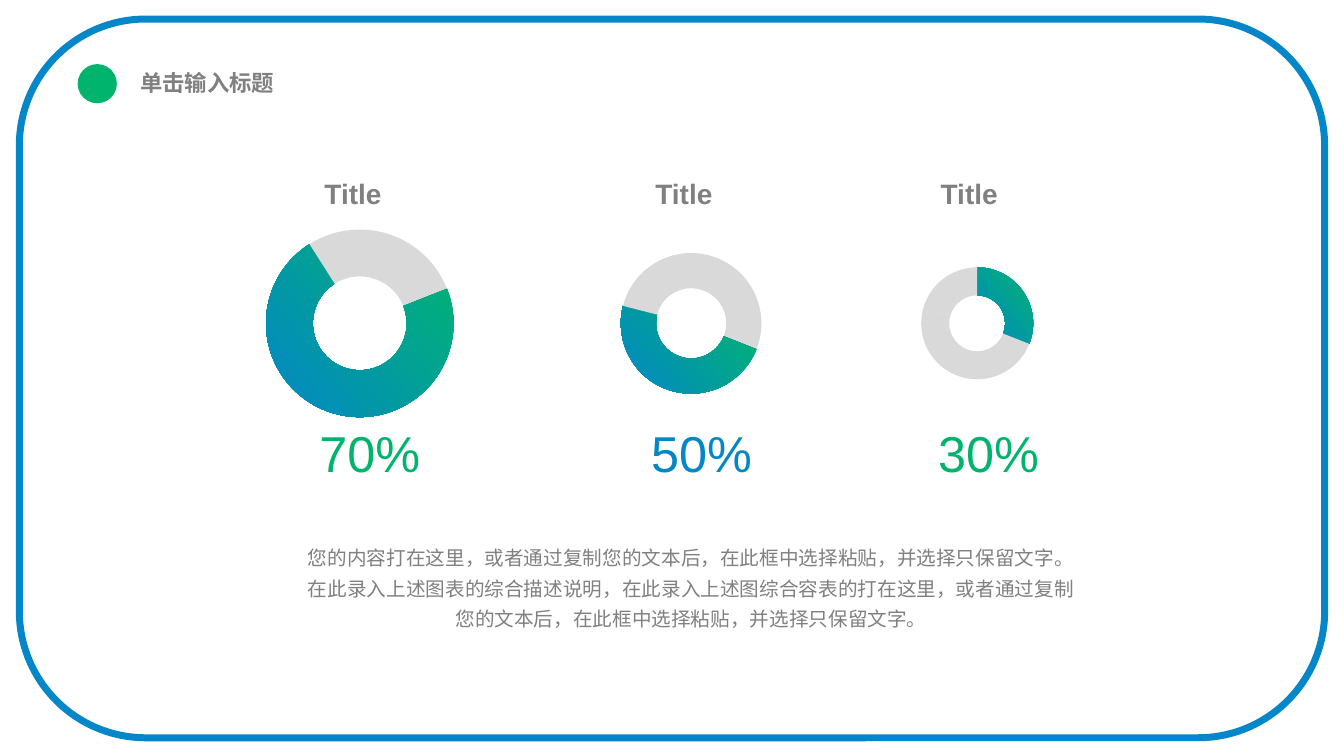
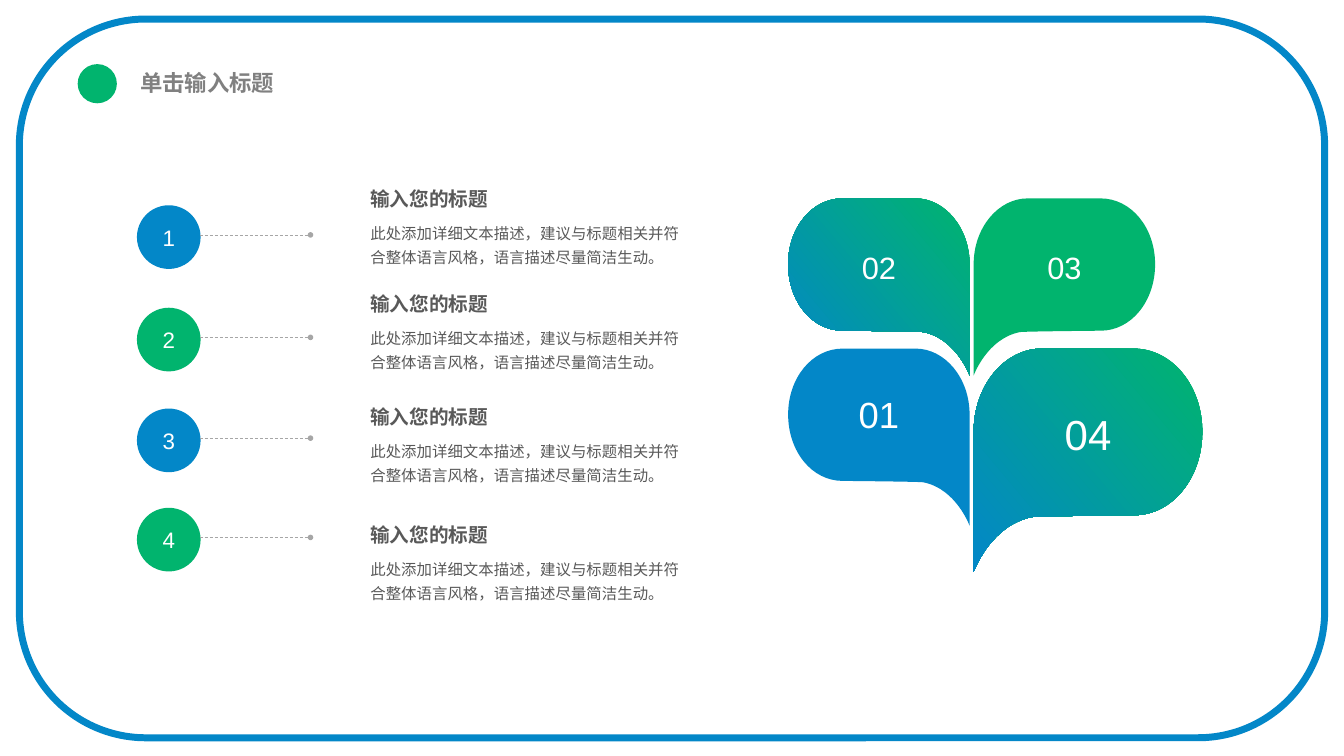
import lxml.etree
import pptx
import pptx.chart.data
import pptx.dml.color
import pptx.enum.chart
import pptx.enum.dml
import pptx.enum.shapes
import pptx.enum.text
import pptx.oxml.ns
import pptx.util

Pt = pptx.util.Pt
RGB = pptx.dml.color.RGBColor
SHAPE = pptx.enum.shapes.MSO_SHAPE
ALIGN = pptx.enum.text.PP_ALIGN
ANCHOR = pptx.enum.text.MSO_ANCHOR
qn = pptx.oxml.ns.qn

BLUE = RGB(0x03, 0x87, 0xC8)
GREEN = RGB(0x01, 0xB4, 0x6E)
BLEND = (GREEN, BLUE)
WHITE = RGB(0xFF, 0xFF, 0xFF)
BLACK = RGB(0, 0, 0)
PALE = RGB(0xD9, 0xD9, 0xD9)
RULE = RGB(0xA6, 0xA6, 0xA6)
GREY = RGB(0x80, 0x80, 0x80)
DARK = RGB(0x59, 0x59, 0x59)
FONT = "Arial"

TITLE = "单击输入标题"
HEAD = "输入您的标题"
BODY = "此处添加详细文本描述，建议与标题相关并符合整体语言风格，语言描述尽量简洁生动。"
NOTE = (
    "您的内容打在这里，或者通过复制您的文本后，在此框中选择粘贴，并选择只保留文字。"
    "在此录入上述图表的综合描述说明，在此录入上述图综合容表的打在这里，"
    "或者通过复制您的文本后，在此框中选择粘贴，并选择只保留文字。"
)

LEAF_W = 129.6
LEAF_START = (39, 0)
LEAF = [
    ((91, 0), (91, 0), (91, 0)),
    ((112, 0), (LEAF_W, 21), (LEAF_W, 47)),
    ((LEAF_W, 73), (LEAF_W, 126.5), (LEAF_W, 126.5)),
    ((LEAF_W, 126.5), (120, 100), (96.5, 95.5)),
    ((93.5, 95), (39, 94.5), (39, 94.5)),
    ((17, 94.5), (0, 73.5), (0, 47)),
    ((0, 21), (17, 0), (39, 0)),
]


def paint(fill, color):
    if color == BLEND:
        fill.gradient()
        fill.gradient_angle = 220
        for stop, shade in zip(fill.gradient_stops, BLEND):
            stop.color.rgb = shade
        fill.gradient_stops[0].position = 0
        fill.gradient_stops[1].position = 1
    else:
        fill.solid()
        fill.fore_color.rgb = color


def style(font, size, color, bold=False):
    font.name = FONT
    font.size = Pt(size)
    font.bold = bold
    font.color.rgb = color


def write(frame, text, size, color, bold=False, align=ALIGN.LEFT, space=1.0):
    frame.text = text
    para = frame.paragraphs[0]
    para.alignment = align
    para.line_spacing = space
    style(para.font, size, color, bold)


def label(slide, box, text, size, color, wrap=True, **look):
    frame = slide.shapes.add_textbox(*map(Pt, box)).text_frame
    frame.word_wrap = wrap
    write(frame, text, size, color, **look)


def disc(slide, left, top, size, color):
    dot = slide.shapes.add_shape(
        SHAPE.OVAL, Pt(left), Pt(top), Pt(size), Pt(size))
    dot.shadow.inherit = False
    paint(dot.fill, color)
    dot.line.fill.background()
    return dot


def number(shape, text, size):
    frame = shape.text_frame
    frame.vertical_anchor = ANCHOR.MIDDLE
    write(frame, text, size, WHITE, align=ALIGN.CENTER)


def start(deck):
    slide = deck.slides.add_slide(deck.slide_layouts[5])
    edge = slide.shapes.add_shape(
        SHAPE.ROUNDED_RECTANGLE, Pt(13.8), Pt(13.6), Pt(932.4), Pt(513.4))
    edge.adjustments[0] = 90.4 / 513.4
    edge.shadow.inherit = False
    edge.fill.background()
    edge.line.color.rgb = BLUE
    edge.line.width = Pt(5)
    disc(slide, 55.5, 45.8, 28, GREEN)
    title = slide.shapes.title
    title.left, title.top, title.width, title.height = map(
        Pt, (93, 46, 152, 26.7))
    frame = title.text_frame
    frame.auto_size = pptx.enum.text.MSO_AUTO_SIZE.NONE
    frame.vertical_anchor = ANCHOR.TOP
    write(frame, TITLE, 16, GREY, bold=True, align=ALIGN.JUSTIFY)
    return slide


def place(chart, wide, high):
    area = chart._chartSpace.chart.plotArea
    for old in area.findall(qn("c:layout")):
        area.remove(old)
    layout = lxml.etree.Element(qn("c:layout"))
    area.insert(0, layout)
    manual = lxml.etree.SubElement(layout, qn("c:manualLayout"))
    for tag, val in (
        ("layoutTarget", "inner"), ("xMode", "edge"), ("yMode", "edge"),
        ("x", (1 - wide) / 2), ("y", (1 - high) / 2),
        ("w", wide), ("h", high),
    ):
        lxml.etree.SubElement(manual, qn("c:" + tag)).set("val", str(val))
    area.find(".//" + qn("c:holeSize")).set("val", "69")


def ring(slide, mid, width, height, size, values, hot):
    data = pptx.chart.data.CategoryChartData()
    data.categories = ["1", "2", "3"]
    data.add_series("Series 1", values)
    chart = slide.shapes.add_chart(
        pptx.enum.chart.XL_CHART_TYPE.DOUGHNUT,
        Pt(mid - width / 2), Pt(231 - height / 2),
        Pt(width), Pt(height), data).chart
    chart.has_title = False
    chart.has_legend = False
    style(chart.font, 10, BLACK)
    plot = chart.plots[0]
    plot.vary_by_categories = True
    for i in range(len(values)):
        look = plot.series[0].points[i].format
        paint(look.fill, BLEND if i == hot else PALE)
        look.line.fill.background()
    place(chart, size / width, size / height)


def link(slide, left, right, top):
    line = slide.shapes.add_connector(
        pptx.enum.shapes.MSO_CONNECTOR.STRAIGHT,
        Pt(left), Pt(top), Pt(right), Pt(top))
    line.line.color.rgb = RULE
    line.line.width = Pt(0.5)
    line.line.dash_style = pptx.enum.dml.MSO_LINE.DASH
    props = line._element.spPr
    tail = lxml.etree.SubElement(props.find(qn("a:ln")), qn("a:tailEnd"))
    for key, val in (("type", "oval"), ("w", "sm"), ("len", "sm")):
        tail.set(key, val)
    lxml.etree.SubElement(props, qn("a:effectLst"))


def bend(shape, curves):
    lines = list(shape._element.iter(qn("a:lnTo")))
    for line, dots in zip(lines, curves):
        arc = lxml.etree.Element(qn("a:cubicBezTo"))
        for x, y in dots:
            dot = lxml.etree.SubElement(arc, qn("a:pt"))
            dot.set("x", str(x))
            dot.set("y", str(y))
        line.getparent().replace(line, arc)


def leaf(slide, left, top, scale, flip, color, text, size):
    def spot(dot):
        x, y = dot
        return Pt(scale * (LEAF_W - x if flip else x)), Pt(scale * y)

    curves = [[spot(dot) for dot in part] for part in LEAF]
    pen = slide.shapes.build_freeform(*spot(LEAF_START))
    pen.add_line_segments([part[-1] for part in curves], close=True)
    shape = pen.convert_to_shape(Pt(left), Pt(top))
    bend(shape, curves)
    shape.shadow.inherit = False
    paint(shape.fill, color)
    shape.line.fill.background()
    number(shape, text, size)
    shape.text_frame.margin_bottom = Pt(6.4 + 1.15 * size)


def share(deck):
    slide = start(deck)
    for mid, width, height, size, values, hot, left, head, text, color in (
        (257, 190, 153, 134, (19, 72, 9), 1, 221, 224.7, "70%", GREEN),
        (493.7, 165, 120, 100.5, (31, 48, 21), 1, 458, 461, "50%", BLUE),
        (698, 125, 99, 80, (31, 48, 21), 0, 663, 664.8, "30%", GREEN),
    ):
        ring(slide, mid, width, height, size, values, hot)
        label(slide, (left, 298, 87, 51), text, 36, color, wrap=False)
        label(slide, (head, 122.5, 55.5, 31.5), "Title", 20, GREY,
              wrap=False, bold=True)
    label(slide, (209, 381.5, 569.5, 71), NOTE, 14, GREY,
          align=ALIGN.CENTER, space=1.3)


def steps(deck):
    slide = start(deck)
    for args in (
        (563, 141.7, 1, False, BLEND, "02", 22),
        (563, 249, 1, False, BLUE, "01", 26),
        (695.5, 249, 1.26, True, BLEND, "04", 30),
        (695.5, 141.7, 1, True, GREEN, "03", 22),
    ):
        leaf(slide, *args)
    rows = ((146.6, 130), (219.8, 205.2), (291.8, 285.8), (362.7, 370))
    for i, (row, top) in enumerate(rows):
        dot = disc(slide, 97.8, row, 45.5, GREEN if i % 2 else BLUE)
        number(dot, str(i + 1), 16)
        link(slide, 142.8, 221.8, row + 21.2)
        label(slide, (257.5, top, 174, 24.5), HEAD, 14, DARK, bold=True)
        label(slide, (257.5, top + 22.3, 245, 40), BODY, 11, DARK, space=1.3)


def main():
    deck = pptx.Presentation()
    deck.slide_width = Pt(960)
    deck.slide_height = Pt(540)
    share(deck)
    steps(deck)
    deck.save("out.pptx")


if __name__ == "__main__":
    main()
